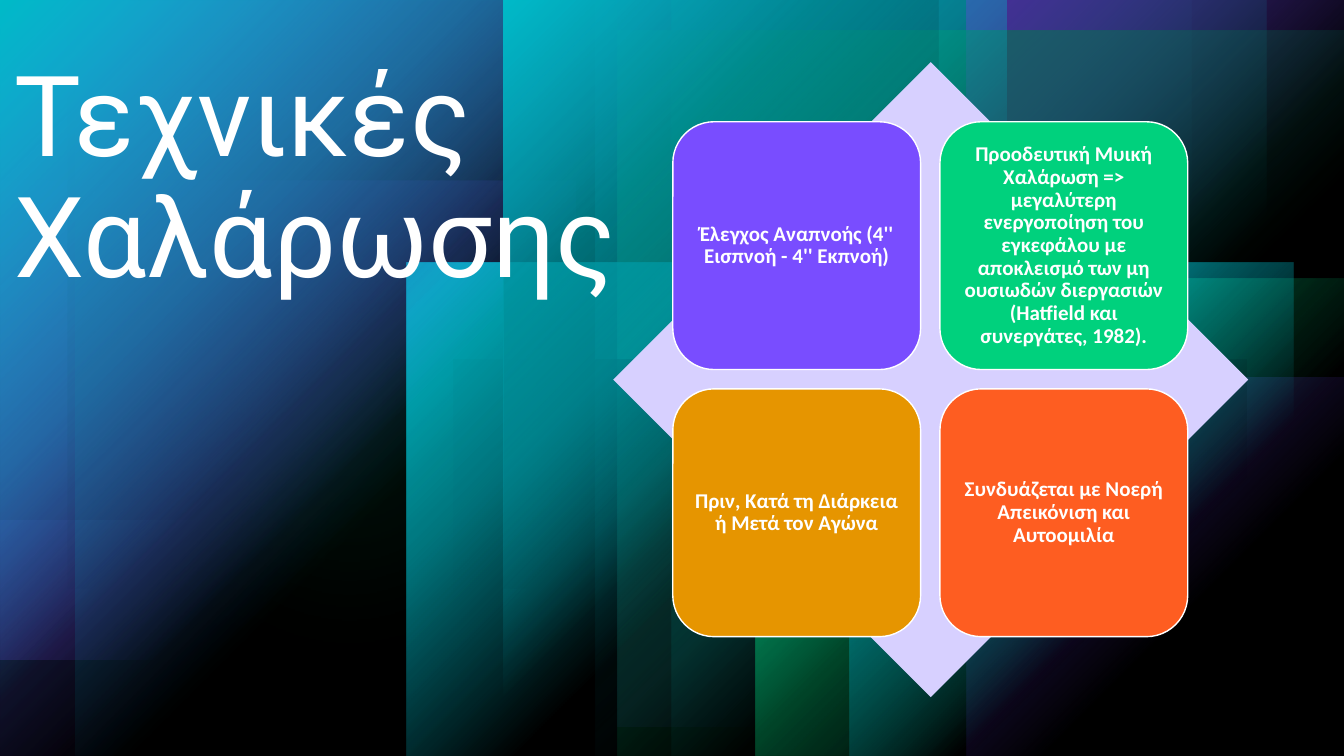
from lxml.etree import SubElement
from pptx import Presentation
from pptx.dml.color import RGBColor
from pptx.enum.shapes import MSO_SHAPE
from pptx.enum.text import MSO_ANCHOR, PP_ALIGN
from pptx.oxml import parse_xml
from pptx.oxml.ns import nsdecls, qn
from pptx.util import Inches, Pt

COLUMNS, ROWS = 160, 90
WHITE, BLACK, LILAC = "FFFFFF", "000000", "D7D0FF"
VIOLET, GREEN, TEAL = "794DFF", "00D17D", "00BAC8"
AMBER, ORANGE = "E69500", "FE5D21"


def rgb(hex_code):
    return RGBColor.from_string(hex_code)


def apply(target, formats):
    for name, value in formats.items():
        setattr(target, name, value)


class Deck:
    """Style and current slide; all boxes are (column, row, columns, rows)."""

    cell = Inches(1) / 12
    title_font = {"name": "Roboto", "size": Pt(80)}
    card_font = {"name": "Calibri", "size": Pt(15), "bold": True}
    card_frame = {"word_wrap": True, "vertical_anchor": MSO_ANCHOR.MIDDLE,
                  **{f"margin_{side}": Inches(0.06)
                     for side in ("left", "right", "top", "bottom")}}

    def __init__(self):
        self.deck = Presentation()
        apply(self.deck, {"slide_width": round(COLUMNS * self.cell),
                          "slide_height": round(ROWS * self.cell)})
        self.slide = self.deck.slides.add_slide(self.deck.slide_layouts[6])
        background = self.slide.background.fill
        background.solid()
        background.fore_color.rgb = rgb(BLACK)

    def place(self, box):
        return [round(length * self.cell) for length in box]

    def panel(self, kind, box, color, alpha=100):
        shape = self.slide.shapes.add_shape(kind, *self.place(box))
        shape.shadow.inherit = False
        shape.fill.solid()
        shape.fill.fore_color.rgb = rgb(color)
        shape.line.fill.background()
        if alpha < 100:
            solid = shape._element.spPr.find(qn("a:solidFill"))
            SubElement(solid[0], qn("a:alpha"), val=str(alpha * 1000))
        return shape

    def haze(self, box, color, alpha):
        """A circle whose edge fades out."""
        circle = self.panel(MSO_SHAPE.OVAL, box, color, alpha)
        effects = circle._element.spPr.find(qn("a:effectLst"))
        SubElement(effects, qn("a:softEdge"), rad="1270000")

    def glow(self, box, color, stops, turn=0, flip=""):
        """A rectangle that fades from one corner; stops are (position, alpha)."""
        shape = self.panel(MSO_SHAPE.RECTANGLE, box, color)
        shape.rotation = turn
        for axis in flip:
            shape._element.spPr.xfrm.set(f"flip{axis}", "1")
        marks = "".join(
            f'<a:gs pos="{position * 1000}"><a:srgbClr val="{color}">'
            f'<a:alpha val="{alpha * 1000}"/></a:srgbClr></a:gs>'
            for position, alpha in stops)
        gradient = parse_xml(
            f'<a:gradFill {nsdecls("a")} rotWithShape="1"><a:gsLst>{marks}</a:gsLst>'
            '<a:path path="circle"><a:fillToRect r="100000" b="100000"/></a:path>'
            '</a:gradFill>')
        solid = shape._element.spPr.find(qn("a:solidFill"))
        solid.addprevious(gradient)
        shape._element.spPr.remove(solid)

    def veil(self):
        self.panel(MSO_SHAPE.RECTANGLE, (0, 0, COLUMNS, ROWS), BLACK, 40)

    def set_text(self, frame, text, font, align):
        paragraph = frame.paragraphs[0]
        apply(paragraph, {"text": text, "alignment": align, "line_spacing": 0.9})
        apply(paragraph.runs[0].font, font)
        paragraph.runs[0].font.color.rgb = rgb(WHITE)

    def title(self, box, text):
        frame = self.slide.shapes.add_textbox(*self.place(box)).text_frame
        frame.word_wrap = True
        self.set_text(frame, text, self.title_font, PP_ALIGN.LEFT)

    def card(self, box, color, text):
        shape = self.panel(MSO_SHAPE.ROUNDED_RECTANGLE, box, color)
        shape.line.color.rgb = rgb(WHITE)
        shape.line.width = Pt(1)
        apply(shape.text_frame, self.card_frame)
        self.set_text(shape.text_frame, text, self.card_font, PP_ALIGN.CENTER)


def main():
    deck = Deck()
    fade = [(0, 100), (60, 0)]
    faint = [(0, 60), (60, 0)]

    # Base lights under a dark veil
    deck.glow((0, 21.6, 68.5, 68.5), VIOLET, faint, flip="V")
    deck.haze((75.5, 5.2, 56.6, 56.6), GREEN, 60)
    deck.haze((0, 6.7, 83.3, 83.3), GREEN, 20)
    deck.glow((0, 0, 70.9, 90), TEAL, fade, 180, "V")
    deck.glow((70.9, 0, 70.9, 90), TEAL, fade, 180, "HV")
    deck.glow((73.5, 0, 86.5, 86.5), VIOLET, fade, 180, "V")
    deck.veil()

    # Middle lights under a second veil
    deck.glow((0, 21.5, 68.5, 68.5), VIOLET, faint, 270)
    deck.haze((83.8, 0, 56.6, 56.6), GREEN, 96)
    deck.haze((80.3, 16.2, 72.2, 72.2), VIOLET, 60)
    deck.glow((79.9, 0, 70.9, 90), TEAL, fade)
    deck.glow((9, 0, 70.9, 90), TEAL, fade, flip="H")
    deck.glow((115, 45, 45, 45), VIOLET, fade, 90)
    deck.glow((115, 0, 45, 45), VIOLET, fade, 90, "H")
    deck.glow((73.5, 3.6, 86.5, 86.5), GREEN, fade, 180)
    deck.veil()

    # Lower right corner
    deck.glow((101.9, 42.8, 58.1, 47.2), BLACK, [(0, 80), (22, 60), (60, 0)], 180)
    deck.glow((90, 33.2, 70, 56.8), GREEN, [(0, 100), (63, 0)], 180)
    for side, top, color, stops in (
            (47.2, 42.8, BLACK, [(0, 80), (30, 60), (65, 0)]),
            (52.8, 31.3, TEAL, [(0, 100), (33, 60), (64, 0)])):
        for left, flip in ((101.2, "H"), (101.2 - side, "")):
            deck.glow((left, top, side, ROWS - top), color, stops, 180, flip)

    # Upper left corner
    deck.glow((14.6, -14.6, 61.8, 91.2), BLACK, [(0, 80), (19, 60), (56, 0)], 270, "H")
    shade = [(0, 80), (20, 60), (60, 0)]
    deck.glow((8.1, 0, 51.8, 70.1), BLACK, shade, flip="H")
    deck.glow((59.9, 0, 51.8, 70.1), BLACK, shade)
    deck.glow((18.6, -18.6, 78.5, 115.7), VIOLET, [(0, 100), (50, 0)], 270, "H")
    for left, flip in ((0, "H"), (59.9, "")):
        deck.glow((left, 0, 59.9, 85.9), TEAL, [(0, 100), (39, 40), (57, 0)], flip=flip)

    # Title
    deck.title((0.6, 6.5, 83.6, 49.7), "Τεχνικές Χαλάρωσης")

    # Diamond with the four techniques
    deck.panel(MSO_SHAPE.DIAMOND, (73, 7.4, 75.6, 75.6), LILAC)
    techniques = [
        (VIOLET, "Έλεγχος Αναπνοής (4'' Εισπνοή - 4'' Εκπνοή)"),
        (GREEN, "Προοδευτική Μυική Χαλάρωση => μεγαλύτερη ενεργοποίηση του "
                "εγκεφάλου με αποκλεισμό των μη ουσιωδών διεργασιών "
                "(Hatfield και συνεργάτες, 1982)."),
        (AMBER, "Πριν, Κατά τη Διάρκεια ή Μετά τον Αγώνα"),
        (ORANGE, "Συνδυάζεται με Νοερή Απεικόνιση και Αυτοομιλία"),
    ]
    size, pitch = 29.5, 31.8
    for index, (color, text) in enumerate(techniques):
        row, column = divmod(index, 2)
        deck.card((80.1 + column * pitch, 14.5 + row * pitch, size, size), color, text)

    deck.deck.save("out.pptx")


if __name__ == "__main__":
    main()
